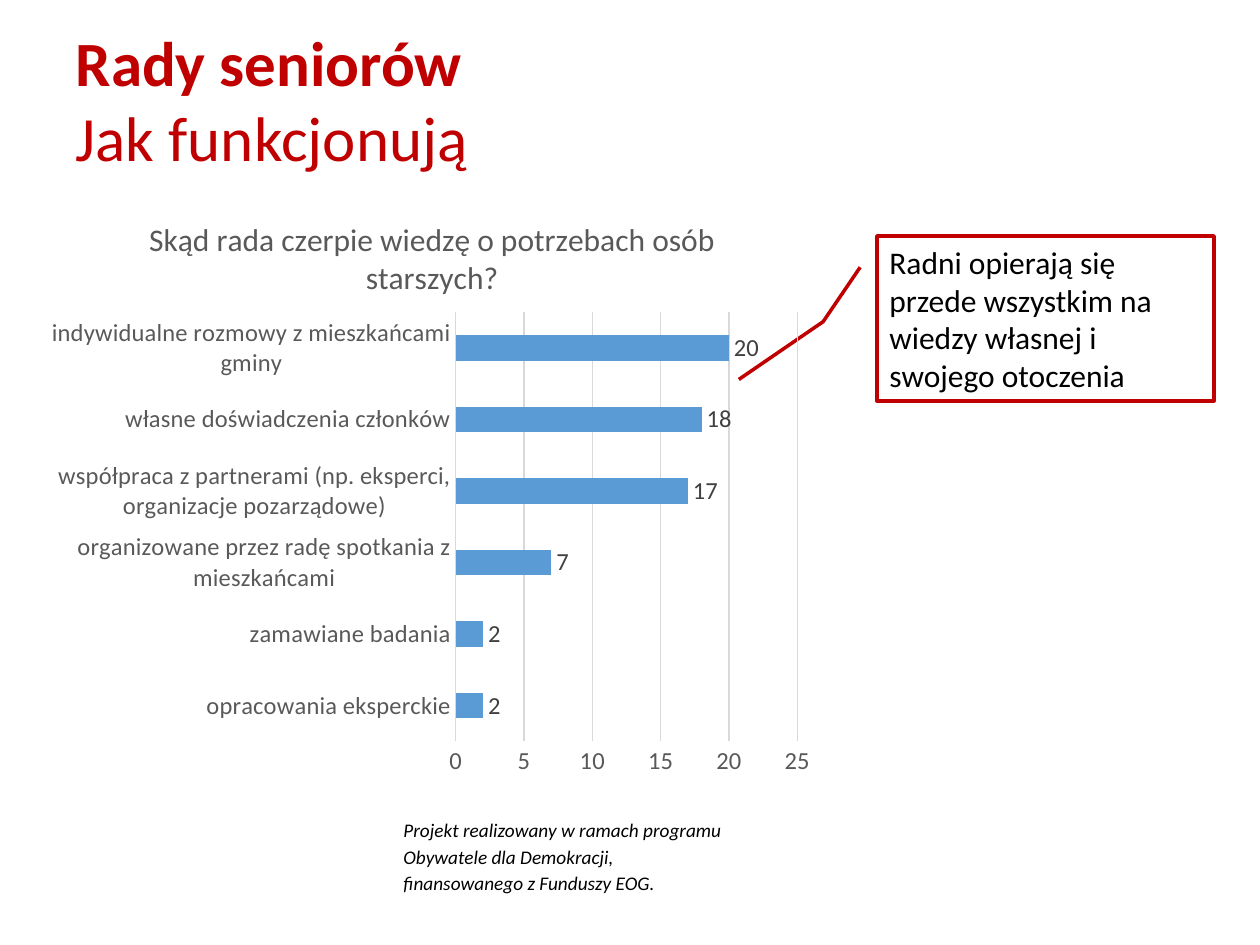
"""Build a slide on how senior councils learn about the needs of older people."""
from lxml import etree
from pptx import Presentation, util as u
from pptx.chart import data as chart_data
from pptx.dml.color import RGBColor
from pptx.enum import chart as ce, shapes, text

SCALE = 914400 / 126
COLORS = {"accent": "C00000", "bar": "5B9BD5", "grid": "D9D9D9", "muted": "595959",
          "label": "404040", "black": "000000", "white": "FFFFFF"}


def box(left, top, width, height):
    return [u.Emu(round(value * SCALE)) for value in (left, top, width, height)]


def format_font(font, size, color, **values):
    for name, value in {"name": "Calibri", "size": u.Pt(size), **values}.items():
        setattr(font, name, value)
    font.color.rgb = RGBColor.from_string(COLORS[color])


presentation = Presentation()
presentation.slide_width, presentation.slide_height = box(0, 0, 1260, 945)[2:]
slide = presentation.slides.add_slide(presentation.slide_layouts[5])

title = slide.shapes.title
title.left, title.top, title.width, title.height = box(63, 32, 1033, 134)
title.text_frame.vertical_anchor = text.MSO_ANCHOR.MIDDLE
title.text_frame.auto_size = text.MSO_AUTO_SIZE.NONE
paragraph = title.text_frame.paragraphs[0]
paragraph.alignment = text.PP_ALIGN.LEFT
for content, bold in (("Rady seniorów", True), ("Jak funkcjonują", False)):
    if paragraph.runs:
        paragraph.add_line_break()
    run = paragraph.add_run()
    run.text = content
    format_font(run.font, 36, "accent", bold=bold)

footer = slide.shapes.add_textbox(*box(391, 809, 350, 93))
footer.text_frame.word_wrap = True
paragraph = footer.text_frame.paragraphs[0]
paragraph.text = ("Projekt realizowany w ramach programu Obywatele dla Demokracji, "
                  "finansowanego z Funduszy EOG.")
paragraph.line_spacing = 1.15
format_font(paragraph.font, 11, "black", italic=True)

callout = slide.shapes.add_shape(shapes.MSO_SHAPE.LINE_CALLOUT_2, *box(877, 236, 337, 165))
for index, value in enumerate((0.19, -0.05, 0.52, -0.16, 0.87, -0.41)):
    callout.adjustments[index] = value
callout.shadow.inherit = False
callout.fill.solid()
callout.fill.fore_color.rgb = RGBColor.from_string(COLORS["white"])
callout.line.color.rgb = RGBColor.from_string(COLORS["accent"])
callout.line.width = u.Pt(2)
callout.text_frame.word_wrap = True
callout.text_frame.vertical_anchor = text.MSO_ANCHOR.MIDDLE
paragraph = callout.text_frame.paragraphs[0]
paragraph.text = "Radni opierają się przede wszystkim na wiedzy własnej i swojego otoczenia"
paragraph.alignment = text.PP_ALIGN.LEFT
format_font(paragraph.font, 18, "black")

sources = {
    "opracowania eksperckie": 2,
    "zamawiane badania": 2,
    "organizowane przez radę spotkania z mieszkańcami": 7,
    "współpraca z partnerami (np. eksperci, organizacje pozarządowe)": 17,
    "własne doświadczenia członków": 18,
    "indywidualne rozmowy z mieszkańcami gminy": 20,
}
data = chart_data.CategoryChartData(number_format="###0")
data.categories = list(sources)
data.add_series("Series 1", list(sources.values()))
chart = slide.shapes.add_chart(ce.XL_CHART_TYPE.BAR_CLUSTERED, *box(35, 193, 794, 596), data).chart
format_font(chart.font, 10, "black")
chart.has_legend = False
chart.has_title = True
chart.chart_title.include_in_layout = False
paragraph = chart.chart_title.text_frame.paragraphs[0]
paragraph.text = "Skąd rada czerpie wiedzę o potrzebach osób starszych?"
format_font(paragraph.runs[0].font, 18, "muted", bold=False)

for axis in (chart.category_axis, chart.value_axis):
    axis.major_tick_mark = axis.minor_tick_mark = ce.XL_TICK_MARK.NONE
    format_font(axis.tick_labels.font, 14, "muted")
chart.value_axis.format.line.fill.background()
chart.value_axis.has_major_gridlines = True
for name, value in {"minimum_scale": 0, "maximum_scale": 25, "major_unit": 5}.items():
    setattr(chart.value_axis, name, value)
chart.value_axis.tick_labels.number_format = "###0"
chart.value_axis.tick_labels.number_format_is_linked = False
for line in (chart.category_axis.format.line, chart.value_axis.major_gridlines.format.line):
    line.color.rgb = RGBColor.from_string(COLORS["grid"])
    line.width = u.Pt(0.75)

plot = chart.plots[0]
plot.gap_width = 182
plot.vary_by_categories = False
plot.series[0].format.fill.solid()
plot.series[0].format.fill.fore_color.rgb = RGBColor.from_string(COLORS["bar"])
plot.has_data_labels = True
labels = plot.data_labels
for name, value in {"show_value": True, "position": ce.XL_LABEL_POSITION.OUTSIDE_END,
                    "number_format": "###0", "number_format_is_linked": False}.items():
    setattr(labels, name, value)
format_font(labels.font, 14, "label")

plot_area = chart.element.find(".//{*}plotArea")
for old_layout in plot_area.findall("{*}layout"):
    plot_area.remove(old_layout)
namespace = "{" + etree.QName(plot_area).namespace + "}"
layout = etree.Element(namespace + "layout")
manual = etree.SubElement(layout, namespace + "manualLayout")
for name, value in {"layoutTarget": "inner", "xMode": "edge", "yMode": "edge",
                    "x": 0.53, "y": 0.2, "w": 0.43, "h": 0.72}.items():
    etree.SubElement(manual, namespace + name, val=str(value))
plot_area.insert(0, layout)

presentation.save("out.pptx")
